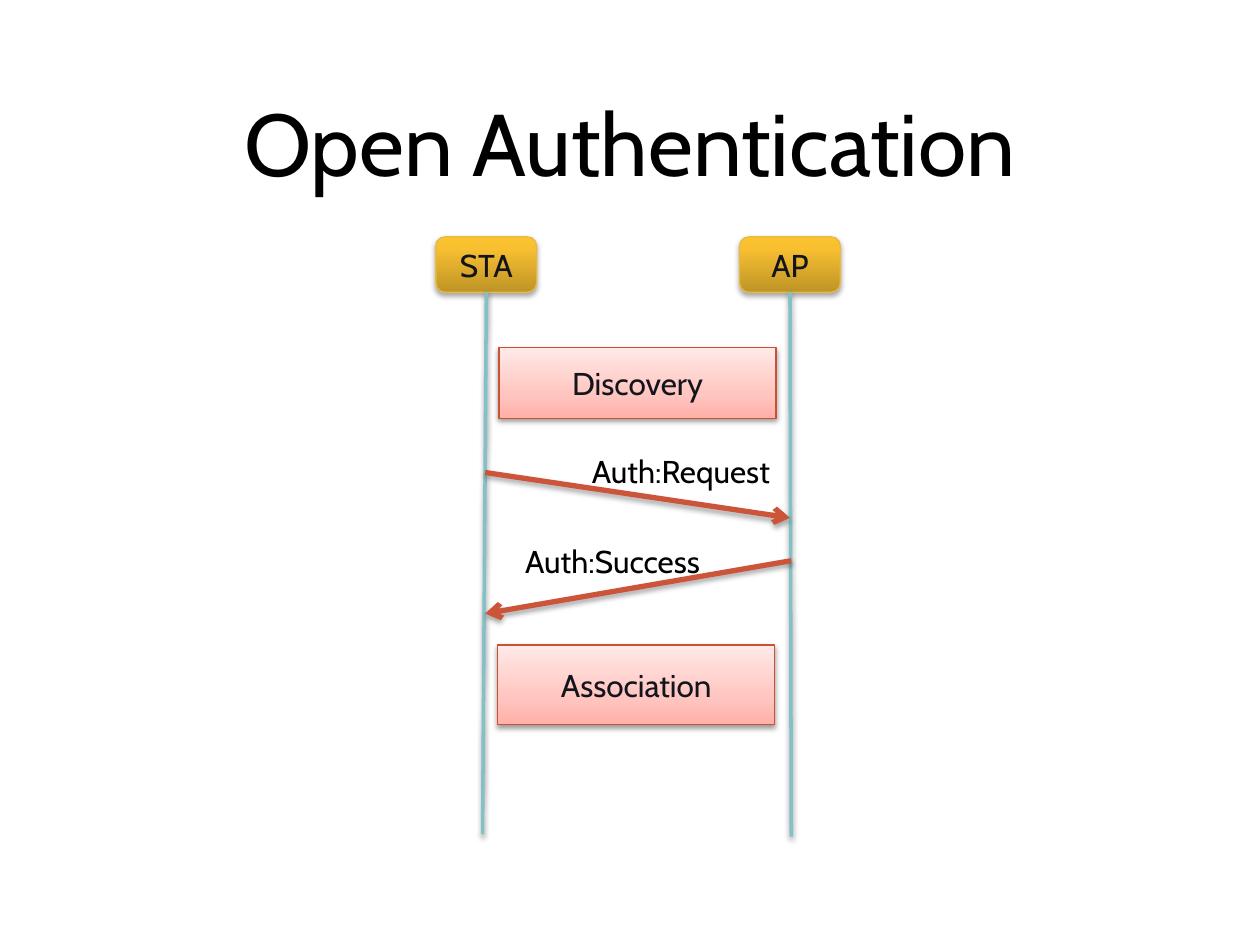
import pptx
import pptx.dml.color
import pptx.enum.shapes
import pptx.enum.text
import pptx.oxml
import pptx.oxml.ns
import pptx.util

Inches = pptx.util.Inches
Pt = pptx.util.Pt
SHAPE = pptx.enum.shapes.MSO_SHAPE
ALIGN = pptx.enum.text.PP_ALIGN
MIDDLE = pptx.enum.text.MSO_ANCHOR.MIDDLE

GOLD = [(0, "BF9426"), (80, "F8C031"), (100, "FDC32D")]
PINK = [(0, "FFB0A8"), (35, "FFC6C1"), (100, "FFE9E7")]
RED = "CC5439"
TEAL = "83C1C6"


def color(code):
    """Turn a hex string into a colour."""
    return pptx.dml.color.RGBColor.from_string(code)


def add_xml(parent, body):
    """Append a drawing element given as text."""
    tag, rest = body.split(" ", 1)
    space = pptx.oxml.ns.nsdecls("a")
    parent.append(pptx.oxml.parse_xml(f"<{tag} {space} {rest}"))


def add_shadow(item, alpha, dist):
    """Give a shape or line a soft shadow that falls straight down."""
    add_xml(
        item._element.spPr,
        f'<a:effectLst ><a:outerShdw blurRad="{Pt(3.1)}" dist="{Pt(dist)}" '
        'dir="5400000" rotWithShape="0"><a:srgbClr val="000000">'
        f'<a:alpha val="{alpha * 1000}"/></a:srgbClr></a:outerShdw></a:effectLst>'
        .replace("<", "", 1),
    )


def set_line(line, code, width):
    """Set the colour and width of a line."""
    line.color.rgb = color(code)
    line.width = Pt(width)


def set_text(frame, text, size, code, align):
    """Write one line of text and format it."""
    frame.text = text
    para = frame.paragraphs[0]
    para.alignment = align
    for run in para.runs:
        run.font.name = "Cabin"
        run.font.size = Pt(size)
        run.font.color.rgb = color(code)


def set_fade(fill, stops):
    """Fill with colour stops that run from bottom to top."""
    fill.gradient()
    fill.gradient_angle = 90
    stop_list = fill._fill._gradFill.find(pptx.oxml.ns.qn("a:gsLst"))
    for old in list(stop_list):
        stop_list.remove(old)
    for place, code in stops:
        add_xml(
            stop_list,
            f'a:gs pos="{place * 1000}"><a:srgbClr val="{code}"/></a:gs>',
        )


def add_block(slide, kind, spot, text, stops, edge, shade):
    """Add a shaded box with centred text."""
    box = slide.shapes.add_shape(kind, *map(Inches, spot))
    set_fade(box.fill, stops)
    set_line(box.line, edge, 0.75)
    add_shadow(box, *shade)
    box.text_frame.vertical_anchor = MIDDLE
    set_text(box.text_frame, text, 18, "13141C", ALIGN.CENTER)
    return box


def add_label(slide, spot, text, size, align, wrap=False):
    """Add plain black text."""
    box = slide.shapes.add_textbox(*map(Inches, spot))
    box.text_frame.word_wrap = wrap
    box.text_frame.vertical_anchor = MIDDLE
    set_text(box.text_frame, text, size, "000000", align)


def add_line(slide, start, end, code, width, shade):
    """Add a straight line with a shadow."""
    kind = pptx.enum.shapes.MSO_CONNECTOR.STRAIGHT
    line = slide.shapes.add_connector(kind, *map(Inches, start + end))
    set_line(line.line, code, width)
    add_shadow(line, *shade)
    return line


def add_party(slide, left, text, foot):
    """Add a party and the lifeline below it."""
    head = add_block(slide, SHAPE.ROUNDED_RECTANGLE, (left, 1.88, 0.8, 0.44),
                     text, GOLD, "E7BA45", (35, 1.8))
    life = add_line(slide, (left + 0.4, 2.32), foot, TEAL, 2, (38, 1.6))
    life.begin_connect(head, 2)


def add_message(slide, start, end, spot, text):
    """Add an arrow between the lifelines with its label."""
    arrow = add_line(slide, start, end, RED, 3, (35, 1.8))
    add_xml(arrow.line._get_or_add_ln(), 'a:tailEnd type="arrow"/>')
    add_label(slide, spot, text, 18, ALIGN.LEFT)


def add_phase(slide, left, top, height, text):
    """Add a phase box between the lifelines."""
    add_block(slide, SHAPE.RECTANGLE, (left, top, 2.2, height),
              text, PINK, "CB5034", (38, 1.6))


def main():
    """Build the slide and save it."""
    deck = pptx.Presentation()
    deck.slide_width = Inches(10)
    deck.slide_height = Inches(7.5)
    slide = deck.slides.add_slide(deck.slide_layouts[6])
    add_label(slide, (0.5, 0.5, 9, 1.25), "Open Authentication", 50,
              ALIGN.CENTER, True)
    add_party(slide, 3.46, "STA", (3.83, 6.62))
    add_party(slide, 5.87, "AP", (6.28, 6.64))
    add_message(slide, (3.85, 3.75), (6.27, 4.11), (4.6, 3.54, 1.63, 0.4),
                "Auth:Request")
    add_message(slide, (6.28, 4.45), (3.85, 4.87), (4.07, 4.25, 1.6, 0.4),
                "Auth:Success")
    add_phase(slide, 3.96, 2.76, 0.56, "Discovery")
    add_phase(slide, 3.95, 5.12, 0.63, "Association")
    deck.save("out.pptx")


if __name__ == "__main__":
    main()
